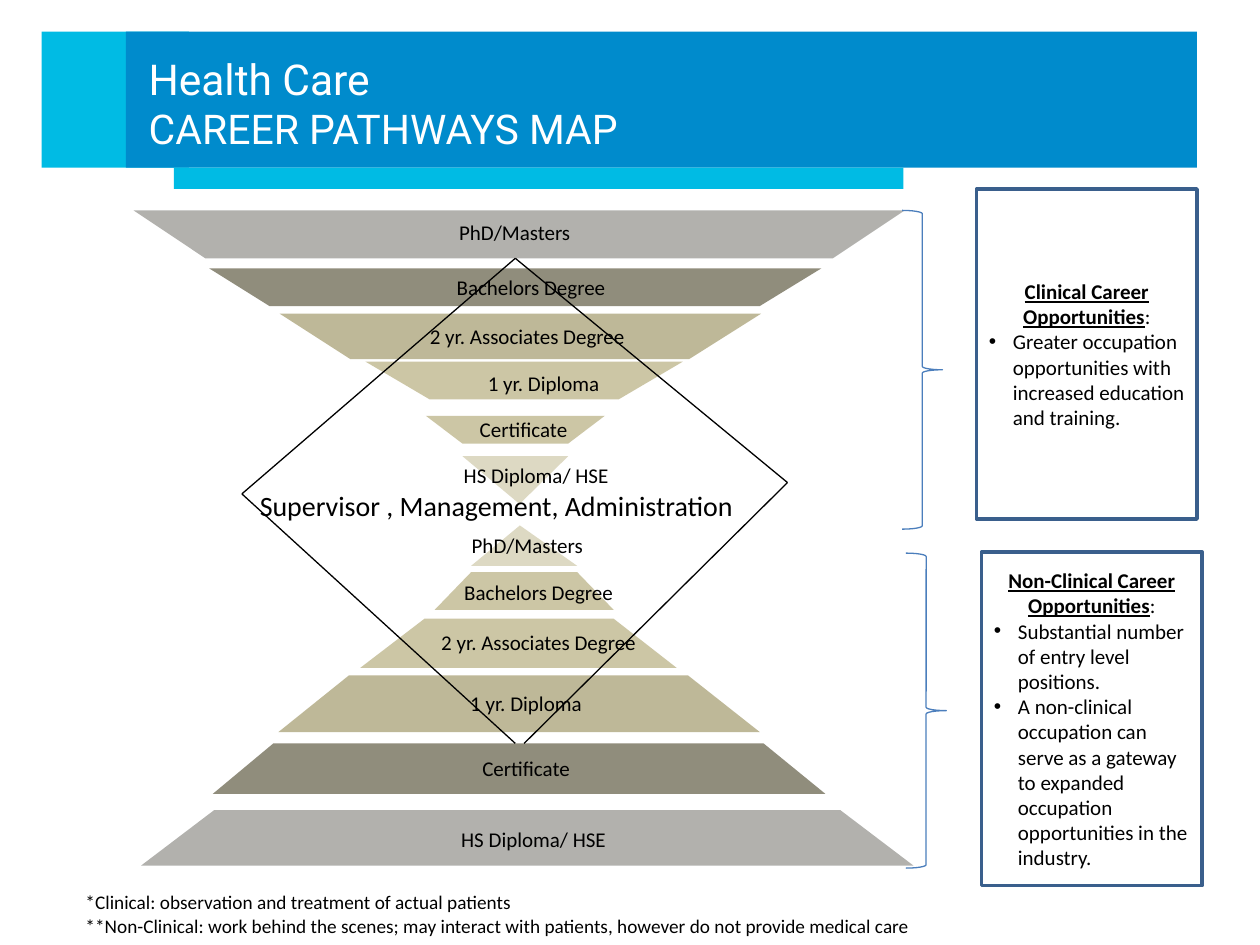
from lxml.etree import SubElement
from pptx import Presentation
from pptx.dml.color import RGBColor
from pptx.enum.shapes import MSO_CONNECTOR, MSO_SHAPE
from pptx.enum.text import MSO_ANCHOR, PP_ALIGN
from pptx.oxml.ns import qn
from pptx.util import Pt

PX = 9144  # 100 px to the inch
COLORS = {
    "cyan": "00BBE4", "blue": "008BCC", "white": "FFFFFF", "black": "000000",
    "brace": "4B7EBC", "frame": "3A5F8C", "tip": "DDD9C3",
    "gray": "1E1C11", "olive": "4A452A", "khaki": "948A54", "sand": "C4BD97",
}
OPACITY = {"gray": 34, "olive": 61, "khaki": 60, "sand": 86}


def paint(shape, fill=None, line=None, width=0.75):
    """Give a shape a flat fill and outline, with no shadow."""
    shape.shadow.inherit = False
    if fill:
        shape.fill.solid()
        shape.fill.fore_color.rgb = RGBColor.from_string(COLORS[fill])
        if fill in OPACITY:
            color = shape._element.spPr.find(qn("a:solidFill"))[0]
            SubElement(color, qn("a:alpha"), val=str(OPACITY[fill] * 1000))
    else:
        shape.fill.background()
    if line:
        shape.line.color.rgb = RGBColor.from_string(COLORS[line])
        shape.line.width = Pt(width)
    else:
        shape.line.fill.background()


def write(target, text, color="black", **font):
    """Add a run to a paragraph, with the given font values."""
    span = target.add_run()
    span.text = text
    span.font.color.rgb = RGBColor.from_string(COLORS[color])
    for name, value in ({"name": "Calibri", "size": Pt(12)} | font).items():
        setattr(span.font, name, value)


deck = Presentation()
deck.slide_width, deck.slide_height = 1000 * PX, 750 * PX
page = deck.slides.add_slide(deck.slide_layouts[5])
shapes = page.shapes

# Header bars and title
for fill, *area in [("cyan", 33, 25, 117, 108), ("blue", 100, 25, 850, 108),
                    ("cyan", 138, 133, 579, 17)]:
    bar = shapes.add_shape(MSO_SHAPE.RECTANGLE, *[n * PX for n in area])
    paint(bar, fill)

title = shapes.title
shapes._spTree.append(title._element)  # in front of the bars
title.left, title.top, title.width, title.height = [n * PX for n in (108, 34, 783, 95)]
title.text_frame.vertical_anchor = MSO_ANCHOR.MIDDLE
title_lines = [("Health Care", 24.3), ("CAREER PATHWAYS MAP", 23.4)]
for index, (text, size) in enumerate(title_lines):
    para = title.text_frame.add_paragraph() if index else title.text_frame.paragraphs[0]
    para.alignment = PP_ALIGN.LEFT
    para.space_before = Pt(0)
    write(para, text, "white", name="Roboto", size=Pt(size))

# Bands of the two pyramids: fill, top, bottom, then left and right of each edge
bands = [
    ("gray", 167, 205, 106, 718, 163, 661),
    ("olive", 213, 243, 166, 652, 214, 603),
    ("khaki", 249, 285, 222, 604, 278, 547),
    ("sand", 287, 317, 290, 542, 341, 491),
    ("sand", 330, 352, 338, 480, 367, 451),
    ("sand", 454, 484, 374, 458, 345, 487),
    ("sand", 491, 530, 337, 487, 286, 537),
    ("khaki", 536, 581, 277, 546, 221, 603),
    ("olive", 590, 630, 217, 606, 169, 655),
    ("gray", 643, 687, 170, 667, 112, 725),
]
for fill, top, bottom, top_left, top_right, low_left, low_right in bands:
    builder = shapes.build_freeform(top_left, top, scale=PX)
    builder.add_line_segments([(top_right, top), (low_right, bottom), (low_left, bottom)])
    paint(builder.convert_to_shape(), fill)

for left, top, height, turn in [(367, 362, 38, 180), (374, 417, 32, 0)]:
    tip = shapes.add_shape(MSO_SHAPE.ISOSCELES_TRIANGLE, left * PX, top * PX, 84 * PX, height * PX)
    tip.adjustments[0] = 0.46
    tip.rotation = turn
    paint(tip, "tip")

for left, top, height in [(716, 167, 253), (719, 439, 250)]:
    brace = shapes.add_shape(MSO_SHAPE.RIGHT_BRACE, left * PX, top * PX, 32 * PX, height * PX)
    paint(brace, line="brace")

# Diamond around the shared roles
for ends in [(409, 205, 192, 392), (409, 205, 625, 383),
             (192, 392, 409, 590), (625, 383, 416, 590)]:
    edge = shapes.add_connector(MSO_CONNECTOR.STRAIGHT, *[n * PX for n in ends])
    edge.line.color.rgb = RGBColor.from_string(COLORS["black"])
    edge.line.width = Pt(0.75)
    SubElement(edge._element.spPr, qn("a:effectLst"))

# Labels: left, top, width, height, size, alignment, lines
levels = [
    ("PhD/Masters", (273, 169), (283, 418)),
    ("Bachelors Degree", (286, 213), (292, 455)),
    ("2 yr. Associates Degree", (283, 252), (292, 495)),
    ("1 yr. Diploma", (296, 289), (282, 543)),
    ("Certificate", (280, 326), (282, 595)),
    ("HS Diploma/ HSE", (290, 362), (288, 651)),
]
labels = [(*spot, 271, 30, 12, PP_ALIGN.CENTER, [text])
          for text, *spots in levels for spot in spots]
labels += [
    (43, 383, 702, 37, 16, PP_ALIGN.CENTER, ["Supervisor , Management, Administration"]),
    (58, 702, 752, 47, 11, PP_ALIGN.LEFT, [
        "*Clinical: observation and treatment of actual patients",
        "**Non-Clinical: work behind the scenes; may interact with patients, "
        "however do not provide medical care"]),
]
for left, top, width, height, size, alignment, lines in labels:
    box = shapes.add_textbox(left * PX, top * PX, width * PX, height * PX)
    box.text_frame.word_wrap = True
    for index, text in enumerate(lines):
        para = box.text_frame.add_paragraph() if index else box.text_frame.paragraphs[0]
        para.alignment = alignment
        write(para, text, size=Pt(size))

# Opportunity panels
panels = [
    (775, 150, 262, "Clinical Career Opportunities", [
        "Greater occupation opportunities with increased education and training."]),
    (779, 438, 265, "Non-Clinical Career Opportunities", [
        "Substantial number of entry level positions.",
        "A non-clinical occupation can serve as a gateway to expanded occupation "
        "opportunities in the industry."]),
]
for left, top, height, heading, points in panels:
    panel = shapes.add_shape(MSO_SHAPE.RECTANGLE, left * PX, top * PX, 175 * PX, height * PX)
    paint(panel, "white", "frame", 2)
    frame = panel.text_frame
    frame.word_wrap = True
    frame.vertical_anchor = MSO_ANCHOR.MIDDLE
    para = frame.paragraphs[0]
    para.alignment = PP_ALIGN.CENTER
    write(para, heading, bold=True, underline=True)
    write(para, ":")
    for point in points:
        para = frame.add_paragraph()
        para.alignment = PP_ALIGN.LEFT
        layout = para._p.get_or_add_pPr()
        layout.set("marL", str(19 * PX))
        layout.set("indent", str(-19 * PX))
        color = SubElement(SubElement(layout, qn("a:buClr")), qn("a:srgbClr"))
        color.set("val", COLORS["black"])
        SubElement(layout, qn("a:buFont"), typeface="Arial")
        SubElement(layout, qn("a:buChar"), char="•")
        write(para, point)

deck.save("out.pptx")
